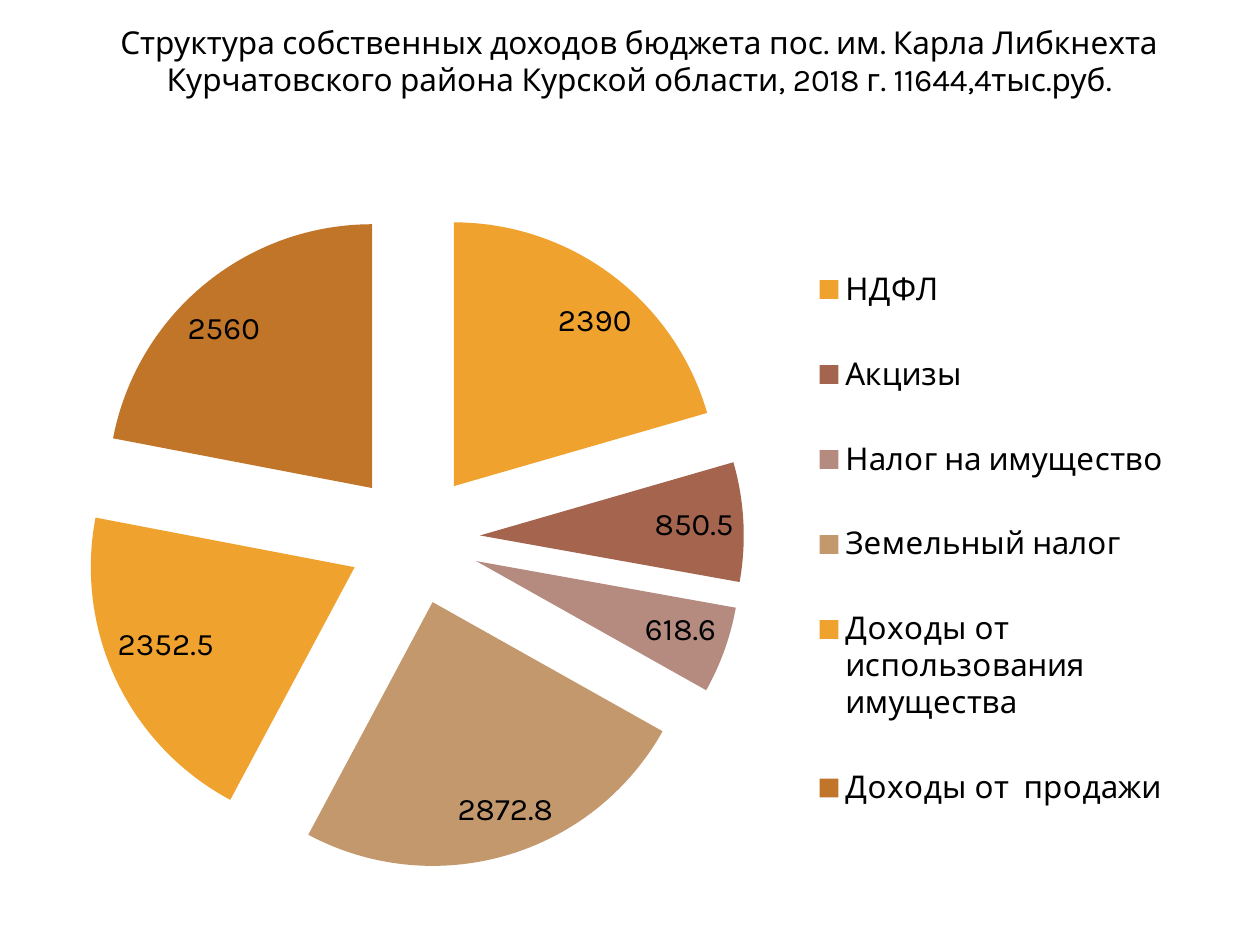
from lxml.etree import SubElement
from pptx import Presentation
from pptx.chart.data import CategoryChartData
from pptx.dml.color import RGBColor
from pptx.enum.chart import XL_CHART_TYPE, XL_LABEL_POSITION, XL_LEGEND_POSITION
from pptx.enum.text import MSO_ANCHOR, MSO_AUTO_SIZE, PP_ALIGN
from pptx.oxml.ns import qn
from pptx.util import Inches, Pt

FONT = "Karla"
TITLE = ("Структура собственных доходов бюджета пос. им. Карла Либкнехта "
         "Курчатовского района Курской области, 2018 г. 11644,4тыс.руб.")
INCOME = [
    ("НДФЛ", 2390, "F0A22E"),
    ("Акцизы", 850.5, "A5644E"),
    ("Налог на имущество", 618.6, "B58B80"),
    ("Земельный налог", 2872.8, "C3986D"),
    ("Доходы от использования имущества", 2352.5, "F0A22E"),
    ("Доходы от  продажи", 2560, "C17529"),
]


def rgb(value):
    return RGBColor.from_string(value)


def format_font(font, size, color="000000"):
    font.name = FONT
    font.size = Pt(size)
    font.bold = False
    font.color.rgb = rgb(color)


def write_text(tf, text, size=18, align=PP_ALIGN.CENTER):
    tf.word_wrap = True
    tf.auto_size = MSO_AUTO_SIZE.SHAPE_TO_FIT_TEXT
    tf.vertical_anchor = MSO_ANCHOR.TOP
    p = tf.paragraphs[0]
    p.alignment = align
    p.line_spacing = 1
    r = p.add_run()
    r.text = text
    format_font(r.font, size)


def add_title(s, left, top, width, height):
    sp = s.shapes.title
    sp.left, sp.top, sp.width, sp.height = map(Inches, (left, top, width, height))
    write_text(sp.text_frame, TITLE)


def set_layout(parent, position, x, y, w, h, inner=False):
    for old in parent.findall(qn("c:layout")):
        parent.remove(old)
    layout = SubElement(parent, qn("c:layout"))
    parent.insert(position, layout)
    manual = SubElement(layout, qn("c:manualLayout"))
    items = [("layoutTarget", "inner")] if inner else []
    items += [("xMode", "edge"), ("yMode", "edge"),
              ("x", x), ("y", y), ("w", w), ("h", h)]
    for name, value in items:
        SubElement(manual, qn(f"c:{name}")).set("val", str(value))


def add_income_pie(s, left, top, width, height):
    data = CategoryChartData()
    data.categories = [name for name, _, _ in INCOME]
    data.add_series("Series 1", [value for _, value, _ in INCOME])
    box = map(Inches, (left, top, width, height))
    chart = s.shapes.add_chart(XL_CHART_TYPE.PIE, *box, data).chart
    chart.has_title = False
    format_font(chart.font, 17.9)

    chart.has_legend = True
    legend = chart.legend
    legend.position = XL_LEGEND_POSITION.RIGHT
    legend.include_in_layout = False
    format_font(legend.font, 17.9)

    plot = chart.plots[0]
    plot.vary_by_categories = True
    series = plot.series[0]
    for i, (_, _, color) in enumerate(INCOME):
        fill = series.points[i].format.fill
        fill.solid()
        fill.fore_color.rgb = rgb(color)
    explosion = SubElement(series._element, qn("c:explosion"))
    explosion.set("val", "25")
    series._element.find(qn("c:dPt")).addprevious(explosion)

    labels = series.data_labels
    labels.show_value = True
    labels.position = XL_LABEL_POSITION.BEST_FIT
    format_font(labels.font, 17.9)

    set_layout(chart._chartSpace.chart.plotArea, 0, 0.03, 0.02, 0.57, 0.95, inner=True)
    set_layout(legend._element, 1, 0.65, 0.04, 0.32, 0.91)


def main():
    prs = Presentation()
    prs.slide_width, prs.slide_height = Inches(10), Inches(7.5)
    s = prs.slides.add_slide(prs.slide_layouts[5])
    add_title(s, 0.51, 0.13, 9.13, 0.71)
    add_income_pie(s, 0.37, 1.55, 9.26, 5.51)
    prs.save("out.pptx")


if __name__ == "__main__":
    main()
